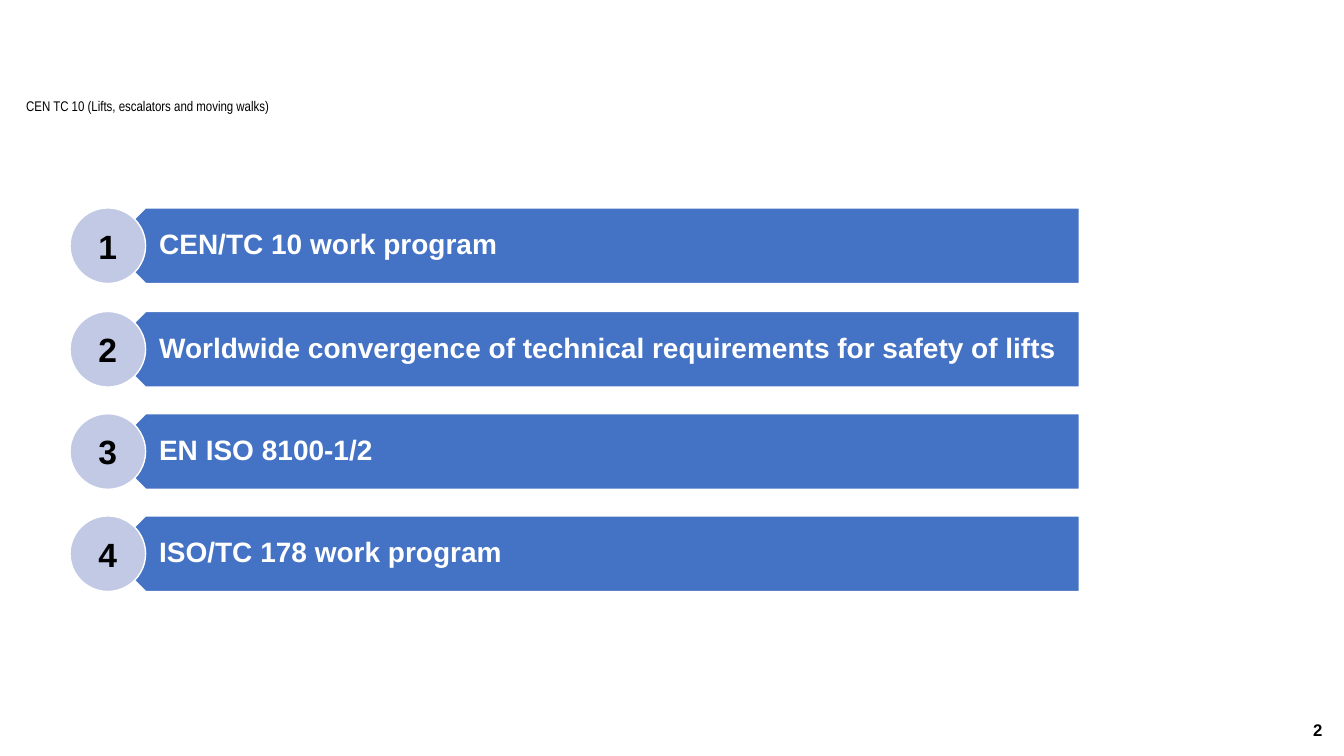
from pptx import Presentation
from pptx.dml.color import RGBColor
from pptx.enum.shapes import MSO_SHAPE
from pptx.enum.text import MSO_ANCHOR, MSO_AUTO_SIZE, PP_ALIGN
from pptx.util import Pt

BLUE = RGBColor(0x44, 0x72, 0xC4)
LILAC = RGBColor(0xC1, 0xC9, 0xE4)
WHITE = RGBColor(0xFF, 0xFF, 0xFF)
BLACK = RGBColor(0, 0, 0)

deck = Presentation()
deck.slide_width, deck.slide_height = Pt(960), Pt(540)
slide = deck.slides.add_slide(deck.slide_layouts[5])
shapes = slide.shapes


def write(shape, text, size, color, align, anchor, bold=True, font="Arial", inset=0, lines=1.0):
    frame = shape.text_frame
    frame.margin_left = Pt(inset)
    frame.margin_top = frame.margin_right = frame.margin_bottom = 0
    frame.auto_size = MSO_AUTO_SIZE.NONE
    frame.word_wrap = True
    frame.vertical_anchor = anchor
    para = frame.paragraphs[0]
    para.alignment = align
    para.line_spacing = lines
    run = para.add_run()
    run.text = text
    run.font.name, run.font.size, run.font.bold = font, Pt(size), bold
    run.font.color.rgb = color


def draw(kind, left, top, width, height, fill):
    shape = shapes.add_shape(kind, Pt(left), Pt(top), Pt(width), Pt(height))
    shape.shadow.inherit = False
    shape.fill.solid()
    shape.fill.fore_color.rgb = fill
    shape.line.color.rgb = WHITE
    shape.line.width = Pt(1)
    return shape


# Title
title = shapes.title
title.left, title.top, title.width, title.height = Pt(18.7), Pt(72.7), Pt(175), Pt(9.4)
write(title, "CEN TC 10 (Lifts, escalators and moving walks)", 10, BLACK,
      PP_ALIGN.LEFT, MSO_ANCHOR.TOP, bold=False, font="Arial Narrow", lines=0.75)
title.text_frame.word_wrap = False

# Slide number
page = shapes.add_textbox(Pt(909.4), Pt(514), Pt(35.3), Pt(14.4))
write(page, "2", 12, BLACK, PP_ALIGN.RIGHT, MSO_ANCHOR.TOP)

# Agenda: arrow bar, label and numbered disc per row
SIDE = 54
rows = [
    (148.5, "CEN/TC 10 work program"),
    (222.5, "Worldwide convergence of technical requirements for safety of lifts"),
    (295.5, "EN ISO 8100-1/2"),
    (368.5, "ISO/TC 178 work program"),
]
for num, (top, text) in enumerate(rows, 1):
    bar = draw(MSO_SHAPE.PENTAGON, 77, top, 694, SIDE, BLUE)
    bar.rotation = 180
    label = shapes.add_textbox(Pt(93.6), Pt(top), Pt(677.4), Pt(SIDE))
    write(label, text, 20, WHITE, PP_ALIGN.LEFT, MSO_ANCHOR.MIDDLE, inset=20, lines=0.9)
    disc = draw(MSO_SHAPE.OVAL, 50, top, SIDE, SIDE, LILAC)
    write(disc, str(num), 24, BLACK, PP_ALIGN.CENTER, MSO_ANCHOR.MIDDLE)

deck.save("out.pptx")
